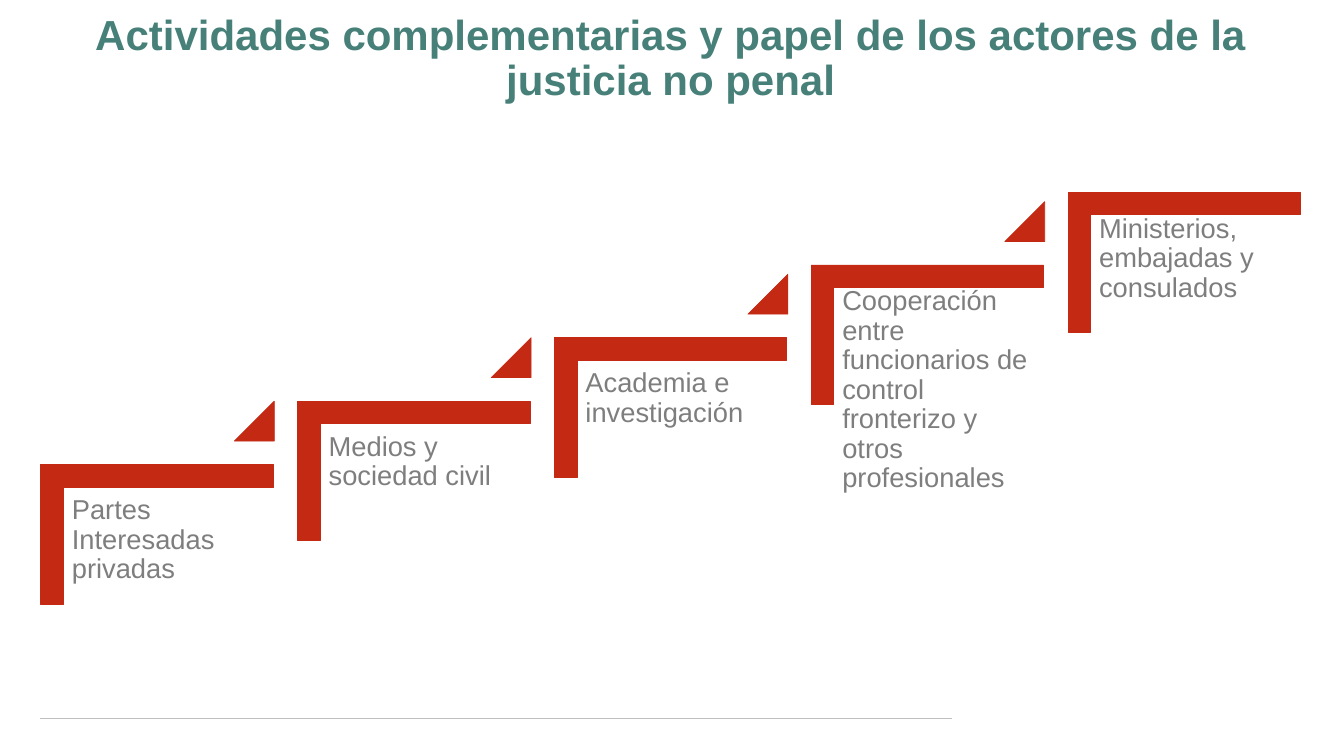
from lxml import etree
from pptx import Presentation
from pptx.dml.color import RGBColor
from pptx.enum.shapes import MSO_CONNECTOR, MSO_SHAPE
from pptx.enum.text import MSO_ANCHOR, MSO_AUTO_SIZE, PP_ALIGN
from pptx.oxml.ns import qn
from pptx.util import Cm, Pt

CORNER, TRIANGLE = MSO_SHAPE.CORNER, MSO_SHAPE.ISOSCELES_TRIANGLE
STRAIGHT = MSO_CONNECTOR.STRAIGHT
TOP, MIDDLE = MSO_ANCHOR.TOP, MSO_ANCHOR.MIDDLE
LEFT, CENTER = PP_ALIGN.LEFT, PP_ALIGN.CENTER

# Content
TITLE = "Actividades complementarias y papel de los actores de la justicia no penal"
# label, rise from the step before, label drop below the corner's top, label height (cm)
LOW, HIGH = (3.2, 3.51, 9.27), (3.66, 3.05, 10.19)
STEPS = [
    ("Partes Interesadas privadas", *LOW),
    ("Medios y sociedad civil", *LOW),
    ("Academia e investigación", *LOW),
    ("Cooperación entre funcionarios de control fronterizo y otros profesionales", *HIGH),
    ("Ministerios, embajadas y consulados", *HIGH),
]

# Formats and measures (cm)
COLORS = {"title": "468078", "step": "C42A13", "label": "7E7E7E", "rule": "BFBFBF"}
TITLE_FONT = {"name": "Arial", "size": Pt(60), "bold": True}
LABEL_FONT = {"name": "Arial", "size": Pt(39), "bold": False}
FIRST_X, FIRST_Y, PITCH = 4.39, 21.08, 12.94
CORNER_W, CORNER_H, THICKNESS = 7.04, 11.71, 0.161
LABEL_DX, LABEL_W = -1.18, 10.57
ARROW_DX, ARROW_DY, ARROW = 7.42, -0.86, 2.01


def color(key):
    return RGBColor.from_string(COLORS[key])


def write(tf, text, font, key, anchor, align, inset_x, inset_y):
    frame = {"word_wrap": True, "auto_size": MSO_AUTO_SIZE.NONE, "vertical_anchor": anchor,
             "margin_left": Cm(inset_x), "margin_right": Cm(inset_x),
             "margin_top": Cm(inset_y), "margin_bottom": Cm(inset_y)}
    for name, value in frame.items():
        setattr(tf, name, value)
    p = tf.paragraphs[0]
    p.alignment, p.line_spacing = align, 0.9
    r = p.add_run()
    r.text = text
    for name, value in font.items():
        setattr(r.font, name, value)
    r.font.color.rgb = color(key)


def add_red_shape(s, kind, x, y, w, h, adjustments, rotation=0):
    sp = s.shapes.add_shape(kind, Cm(x), Cm(y), Cm(w), Cm(h))
    sp.shadow.inherit = False
    sp.rotation = rotation
    for i, value in enumerate(adjustments):
        sp.adjustments[i] = value
    sp.fill.solid()
    sp.fill.fore_color.rgb = color("step")
    sp.line.color.rgb = color("step")
    sp.line.width = Pt(1)


def main():
    prs = Presentation()
    prs.slide_width, prs.slide_height = Cm(67.72), Cm(38.1)
    s = prs.slides.add_slide(prs.slide_layouts[5])

    # Footer rule
    rule = s.shapes.add_connector(STRAIGHT, Cm(2.03), Cm(36.2), Cm(47.96), Cm(36.2))
    rule.line.color.rgb = color("rule")
    rule.line.width = Pt(2.25)
    etree.SubElement(rule._element.spPr, qn("a:effectLst"))

    # Title
    title = s.shapes.title
    title.left, title.top, title.width, title.height = Cm(2.03), Cm(0.25), Cm(63.53), Cm(5.46)
    write(title.text_frame, TITLE, TITLE_FONT, "title", MIDDLE, CENTER, 0.51, 0.25)

    # Staircase: corner, label, and an arrow up to the next step
    y = FIRST_Y
    for i, (label, rise, drop, height) in enumerate(STEPS):
        x = FIRST_X + i * PITCH
        if i:
            y -= rise
        add_red_shape(s, CORNER, x, y, CORNER_W, CORNER_H, [THICKNESS, THICKNESS], 90)
        box = s.shapes.add_textbox(Cm(x + LABEL_DX), Cm(y + drop), Cm(LABEL_W), Cm(height))
        write(box.text_frame, label, LABEL_FONT, "label", TOP, LEFT, 0.41, 0.41)
        if i < len(STEPS) - 1:
            add_red_shape(s, TRIANGLE, x + ARROW_DX, y + ARROW_DY, ARROW, ARROW, [1])

    prs.save("out.pptx")


if __name__ == "__main__":
    main()
